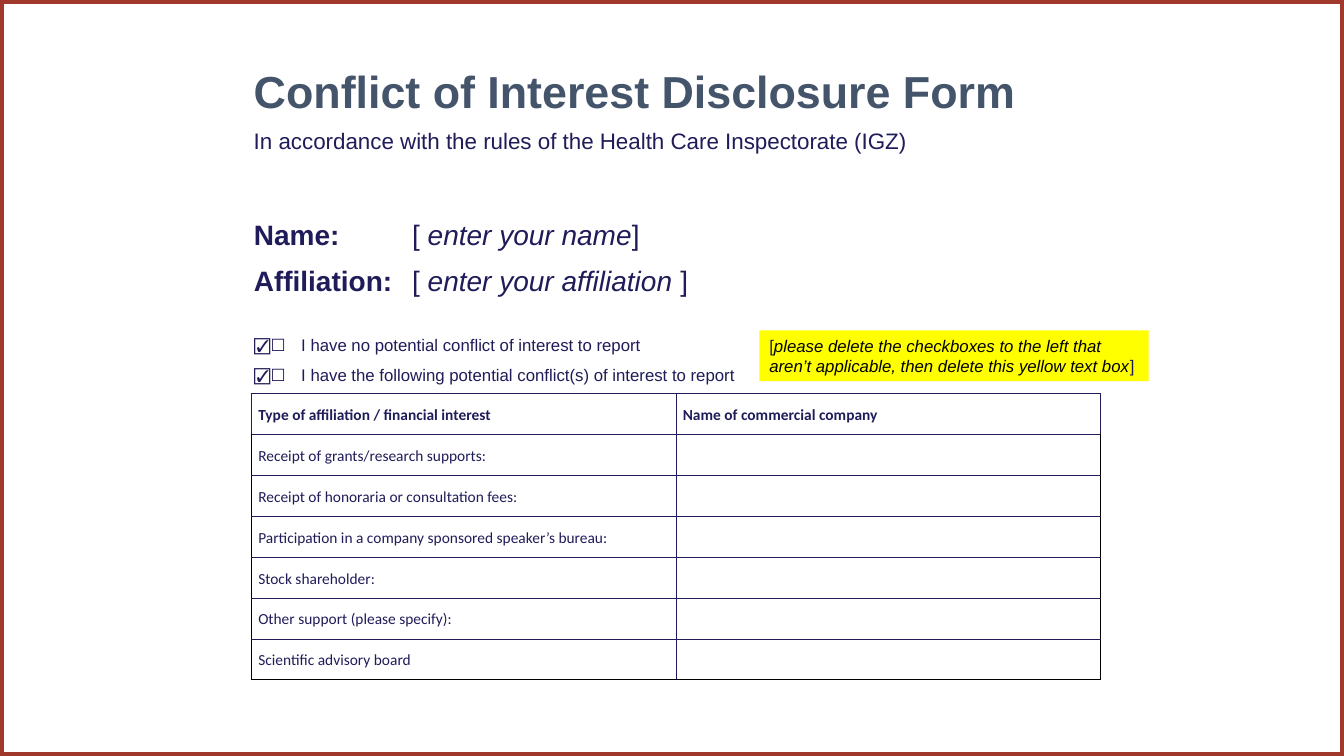
import pptx
import pptx.util
import pptx.dml.color
import pptx.enum.shapes
import pptx.enum.text
import lxml.etree

Pt = pptx.util.Pt
MIDDLE = pptx.enum.text.MSO_ANCHOR.MIDDLE
RECT = pptx.enum.shapes.MSO_SHAPE.RECTANGLE
NAVY = "1F1C59"
BLACK = "000000"


def color(code):
    return pptx.dml.color.RGBColor.from_string(code)


def write(para, runs, size, face="Arial", space=None, before=0):
    # Each run is its text and, if needed, what differs from the default
    para.line_spacing = space
    para.space_before = Pt(before)
    for text, look in runs:
        run = para.add_run()
        run.text = text
        run.font.size = Pt(look.get("size", size))
        run.font.name = look.get("face", face)
        run.font.bold = look.get("bold", False)
        run.font.italic = look.get("italic", False)
        run.font.color.rgb = color(look.get("color", NAVY))


prs = pptx.Presentation()
prs.slide_width = Pt(960)
prs.slide_height = Pt(540)
slide = prs.slides.add_slide(prs.slide_layouts[6])
shapes = slide.shapes

# Red frame
frame = shapes.add_shape(RECT, 0, 0, Pt(960), Pt(540))
frame.shadow.inherit = False
frame.fill.background()
frame.line.color.rgb = color("A0382B")
frame.line.width = Pt(6)

# Title
box = shapes.add_textbox(Pt(174.2), Pt(41.8), Pt(612), Pt(80.6))
box.text_frame.word_wrap = True
head = box.text_frame.paragraphs[0]
write(head, [("Conflict of Interest Disclosure Form", {"bold": True, "color": "44546A"})],
      32, before=3)
sub = box.text_frame.add_paragraph()
write(sub, [("In accordance with the rules of the Health Care Inspectorate (IGZ)", {})],
      16, space=Pt(26))

# Name and affiliation
fields = [("Name:", "enter your name"), ("Affiliation:", "enter your affiliation ")]
for row, (label, hint) in enumerate(fields):
    parts = [
        (174.2, 118.8, [(label, {"bold": True})]),
        (287.3, 470.2, [("[ ", {}), (hint, {"italic": True}), ("]", {})]),
    ]
    for left, width, runs in parts:
        box = shapes.add_textbox(Pt(left), Pt(151.9 + 33.1 * row), Pt(width), Pt(36))
        box.text_frame.word_wrap = True
        write(box.text_frame.paragraphs[0], runs, 20, before=2)

# Check boxes and statements
ticks = [("☑", {}), ("☐", {"face": "Noto Sans CJK JP"})]
claims = ["I have no potential conflict of interest to report",
          "I have the following potential conflict(s) of interest to report"]
columns = [(174.2, 39.6, [ticks, ticks]),
           (208.1, 612, [[(claim, {})] for claim in claims])]
for left, width, lines in columns:
    box = shapes.add_textbox(Pt(left), Pt(228.2), Pt(width), Pt(64.8))
    frame = box.text_frame
    frame.word_wrap = True
    for num, runs in enumerate(lines):
        para = frame.add_paragraph() if num else frame.paragraphs[0]
        write(para, runs, 12, space=Pt(21.6))

# Table of interests
kinds = ["Type of affiliation / financial interest",
         "Receipt of grants/research supports:",
         "Receipt of honoraria or consultation fees:",
         "Participation in a company sponsored speaker’s bureau:",
         "Stock shareholder:",
         "Other support (please specify):",
         "Scientific advisory board"]
last = len(kinds) - 1
grid = shapes.add_table(len(kinds), 2, Pt(179.5), Pt(281), Pt(606.6), Pt(204.4)).table
for row, kind in enumerate(kinds):
    grid.rows[row].height = Pt(29.2)
    for col in range(2):
        cell = grid.cell(row, col)
        cell.vertical_anchor = MIDDLE
        cell.margin_left = cell.margin_right = Pt(5)
        cell.margin_top = cell.margin_bottom = 0
        text = ["Name of commercial company" if row == 0 else "", kind][col == 0]
        if text:
            para = cell.text_frame.paragraphs[0]
            write(para, [(text, {"bold": row == 0})], 11, "Calibri", 1.15)
            para.space_after = Pt(10)

        # Thick outer and header edges, thin inner ones
        thin, thick = (NAVY, 0.25), (NAVY, 1)
        outer = thick if row == 0 else (BLACK, 1)
        edges = {
            "lnL": outer if col == 0 else thin,
            "lnR": outer if col == 1 else thin,
            "lnT": thick if row < 2 else thin,
            "lnB": thick if row == 0 else outer if row == last else thin,
        }
        props = cell._tc.get_or_add_tcPr()
        for tag, (code, width) in edges.items():
            props.append(pptx.oxml.parse_xml(
                f'<a:{tag} xmlns:a="http://schemas.openxmlformats.org/drawingml/2006/main"'
                f' w="{Pt(width)}"><a:solidFill><a:srgbClr val="{code}"/></a:solidFill>'
                f'</a:{tag}>'))
        cell.fill.solid()
        cell.fill.fore_color.rgb = color("FFFFFF")

# Yellow note
note = shapes.add_shape(RECT, Pt(542.4), Pt(236), Pt(278), Pt(36.3))
note.shadow.inherit = False
note.fill.solid()
note.fill.fore_color.rgb = color("FFFF00")
note.line.fill.background()
note.text_frame.word_wrap = True
note.text_frame.vertical_anchor = MIDDLE
para = note.text_frame.paragraphs[0]
para.alignment = pptx.enum.text.PP_ALIGN.LEFT
hint = ("please delete the checkboxes to the left that aren’t applicable, "
        "then delete this yellow text box")
write(para, [("[", {}), (hint, {"italic": True, "color": BLACK}), ("]", {})], 12, before=1)

prs.save("out.pptx")
